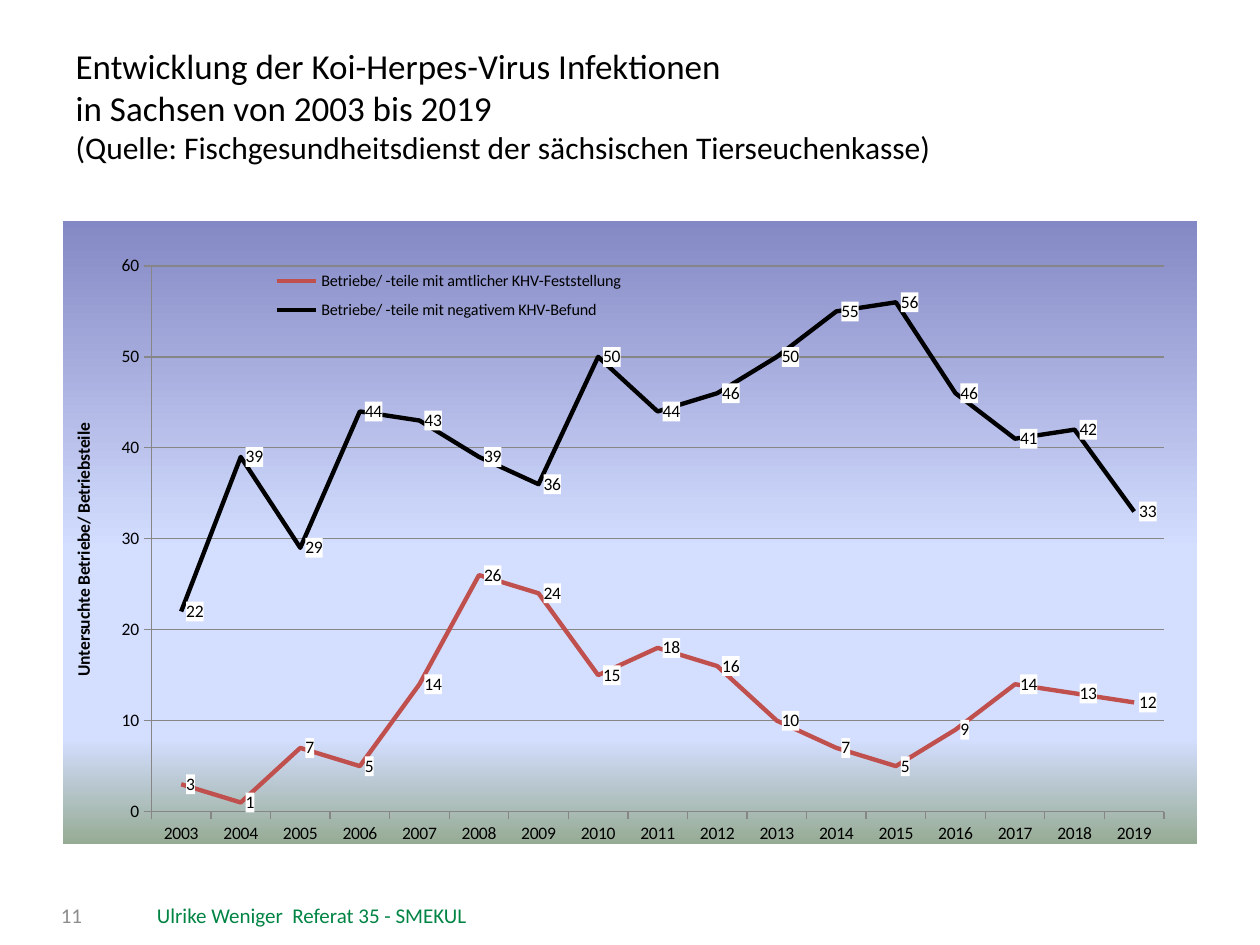
from dataclasses import dataclass

from lxml import etree
from pptx import Presentation
from pptx.chart.data import CategoryChartData
from pptx.dml.color import RGBColor
from pptx.enum.chart import XL_CHART_TYPE, XL_LABEL_POSITION, XL_LEGEND_POSITION, XL_TICK_MARK
from pptx.enum.text import MSO_ANCHOR, MSO_AUTO_SIZE, PP_ALIGN
from pptx.oxml import parse_xml
from pptx.oxml.ns import nsdecls, qn
from pptx.util import Inches, Pt

LINE_CHART = XL_CHART_TYPE.LINE
LABEL_RIGHT = XL_LABEL_POSITION.RIGHT
LEGEND_RIGHT = XL_LEGEND_POSITION.RIGHT
TICK_OUTSIDE = XL_TICK_MARK.OUTSIDE
TOP, MIDDLE = MSO_ANCHOR.TOP, MSO_ANCHOR.MIDDLE
NO_AUTOFIT = MSO_AUTO_SIZE.NONE
LEFT, CENTER, RIGHT = PP_ALIGN.LEFT, PP_ALIGN.CENTER, PP_ALIGN.RIGHT


@dataclass(frozen=True)
class Theme:
    font: str = "Calibri"
    text: str = "000000"
    footer: str = "008444"
    number: str = "8C8C8C"
    grid: str = "868686"
    label_fill: str = "FFFFFF"
    positive: str = "C0504D"
    negative: str = "000000"
    chart_gradient: tuple = ((0, "8488C4"), (53, "D4DEFF"), (83, "D4DEFF"), (100, "96AB94"))
    title_size: float = 20
    source_size: float = 18
    footer_size: float = 12
    chart_size: float = 10
    legend_size: float = 9.2


THEME = Theme()

TITLE_LINES = [
    ("Entwicklung der Koi-Herpes-Virus Infektionen ", THEME.title_size),
    ("in Sachsen von 2003 bis 2019 ", THEME.title_size),
    ("(Quelle: Fischgesundheitsdienst der sächsischen Tierseuchenkasse)", THEME.source_size),
]
YEARS = [str(year) for year in range(2003, 2020)]
FINDINGS = [
    ("Betriebe/ -teile mit amtlicher KHV-Feststellung", THEME.positive,
     (3, 1, 7, 5, 14, 26, 24, 15, 18, 16, 10, 7, 5, 9, 14, 13, 12)),
    ("Betriebe/ -teile mit negativem KHV-Befund", THEME.negative,
     (22, 39, 29, 44, 43, 39, 36, 50, 44, 46, 50, 55, 56, 46, 41, 42, 33)),
]


def style_font(font, size, color=THEME.text, bold=False):
    font.name = THEME.font
    font.size = Pt(size)
    font.bold = bold
    font.color.rgb = RGBColor.from_string(color)


def add_text(paragraph, text, **font_format):
    run = paragraph.add_run()
    run.text = text
    style_font(run.font, **font_format)


def manual_layout(x, y, width, height, inner=False):
    layout = etree.Element(qn("c:layout"))
    manual = etree.SubElement(layout, qn("c:manualLayout"))
    settings = [("layoutTarget", "inner")] if inner else []
    settings += [("xMode", "edge"), ("yMode", "edge"),
                 ("x", x), ("y", y), ("w", width), ("h", height)]
    for tag, value in settings:
        etree.SubElement(manual, qn(f"c:{tag}")).set("val", str(value))
    return layout


def replace_layout(parent, layout, position):
    for old in parent.findall(qn("c:layout")):
        parent.remove(old)
    parent.insert(position, layout)


def shape_properties(fill):
    return parse_xml(f'<c:spPr {nsdecls("c", "a")}>{fill}<a:ln><a:noFill/></a:ln></c:spPr>')


class SlideBuilder:
    def __init__(self, slide, theme):
        self.slide = slide
        self.theme = theme

    def title(self, lines, left, top, width, height):
        heading = self.slide.shapes.title
        heading.left, heading.top, heading.width, heading.height = left, top, width, height
        frame = heading.text_frame
        frame.auto_size = NO_AUTOFIT
        frame.vertical_anchor = TOP
        paragraph = frame.paragraphs[0]
        paragraph.alignment = LEFT
        for index, (line, size) in enumerate(lines):
            if index:
                paragraph.add_line_break()
            add_text(paragraph, line, size=size)

    def footer(self, text, left, top, width, height, color, align):
        frame = self.slide.shapes.add_textbox(left, top, width, height).text_frame
        frame.word_wrap = True
        frame.vertical_anchor = MIDDLE
        frame.paragraphs[0].alignment = align
        add_text(frame.paragraphs[0], text, size=self.theme.footer_size, color=color)

    def line_chart(self, years, findings, axis_title, left, top, width, height):
        data = CategoryChartData()
        data.categories = years
        for name, _, counts in findings:
            data.add_series(name, counts)
        chart = self.slide.shapes.add_chart(LINE_CHART, left, top, width, height, data).chart
        chart.has_title = False
        style_font(chart.font, self.theme.chart_size)
        self.chart_background(chart)
        self.axes(chart, axis_title)
        self.legend(chart)
        for series, (_, color, _) in zip(chart.plots[0].series, findings):
            self.series(series, color)

    def chart_background(self, chart):
        stops = "".join(f'<a:gs pos="{percent * 1000}"><a:srgbClr val="{color}"/></a:gs>'
                        for percent, color in self.theme.chart_gradient)
        gradient = f'<a:gradFill><a:gsLst>{stops}</a:gsLst><a:lin ang="5400000" scaled="0"/></a:gradFill>'
        chart_xml = chart._chartSpace.find(qn("c:chart"))
        chart_xml.addnext(shape_properties(gradient))
        replace_layout(chart_xml.find(qn("c:plotArea")),
                       manual_layout(0.078, 0.073, 0.893, 0.875, inner=True), 0)

    def axes(self, chart, axis_title):
        grid_color = RGBColor.from_string(self.theme.grid)
        counts_axis = chart.value_axis
        for axis in (chart.category_axis, counts_axis):
            axis.major_tick_mark = TICK_OUTSIDE
            axis.format.line.color.rgb = grid_color
            style_font(axis.tick_labels.font, self.theme.chart_size)
        counts_axis.minimum_scale, counts_axis.maximum_scale = 0, 60
        counts_axis.major_unit = 10
        counts_axis.has_major_gridlines = True
        counts_axis.major_gridlines.format.line.color.rgb = grid_color
        frame = counts_axis.axis_title.text_frame
        add_text(frame.paragraphs[0], axis_title, size=self.theme.chart_size, bold=True)
        # Turn the axis title to read upwards
        body = frame._txBody.find(qn("a:bodyPr"))
        body.set("rot", "-5400000")
        body.set("vert", "horz")

    def legend(self, chart):
        chart.has_legend = True
        legend = chart.legend
        legend.position = LEGEND_RIGHT
        legend.include_in_layout = True
        style_font(legend.font, self.theme.legend_size)
        replace_layout(legend._element, manual_layout(0.18, 0.065, 0.32, 0.11), 1)

    def series(self, series, color):
        series.smooth = False
        series.marker.style = None
        series.format.line.color.rgb = RGBColor.from_string(color)
        series.format.line.width = Pt(2.5)
        marker = series._element.get_or_add_marker()
        marker.get_or_add_symbol().set("val", "none")
        labels = series.data_labels
        labels.show_value = True
        labels.position = LABEL_RIGHT
        style_font(labels.font, self.theme.chart_size)
        fill = f'<a:solidFill><a:srgbClr val="{self.theme.label_fill}"/></a:solidFill>'
        labels._element.find(qn("c:txPr")).addprevious(shape_properties(fill))


def main():
    presentation = Presentation()
    presentation.slide_width, presentation.slide_height = Inches(10), Inches(7.5)
    title_only = presentation.slide_layouts[5]
    builder = SlideBuilder(presentation.slides.add_slide(title_only), THEME)

    # Heading with source
    builder.title(TITLE_LINES, Inches(0.5), Inches(0.3), Inches(9), Inches(1.25))

    # Infections per year
    builder.line_chart(YEARS, FINDINGS, "Untersuchte Betriebe/ Betriebsteile",
                       Inches(0.5), Inches(1.75), Inches(9), Inches(4.95))

    # Footer and slide number
    builder.footer("Ulrike Weniger  Referat 35 - SMEKUL", Inches(0.89), Inches(7.06),
                   Inches(3.17), Inches(0.4), THEME.footer, CENTER)
    builder.footer("11", Inches(0.07), Inches(7.06), Inches(0.68), Inches(0.4),
                   THEME.number, RIGHT)

    presentation.save("out.pptx")


if __name__ == "__main__":
    main()
